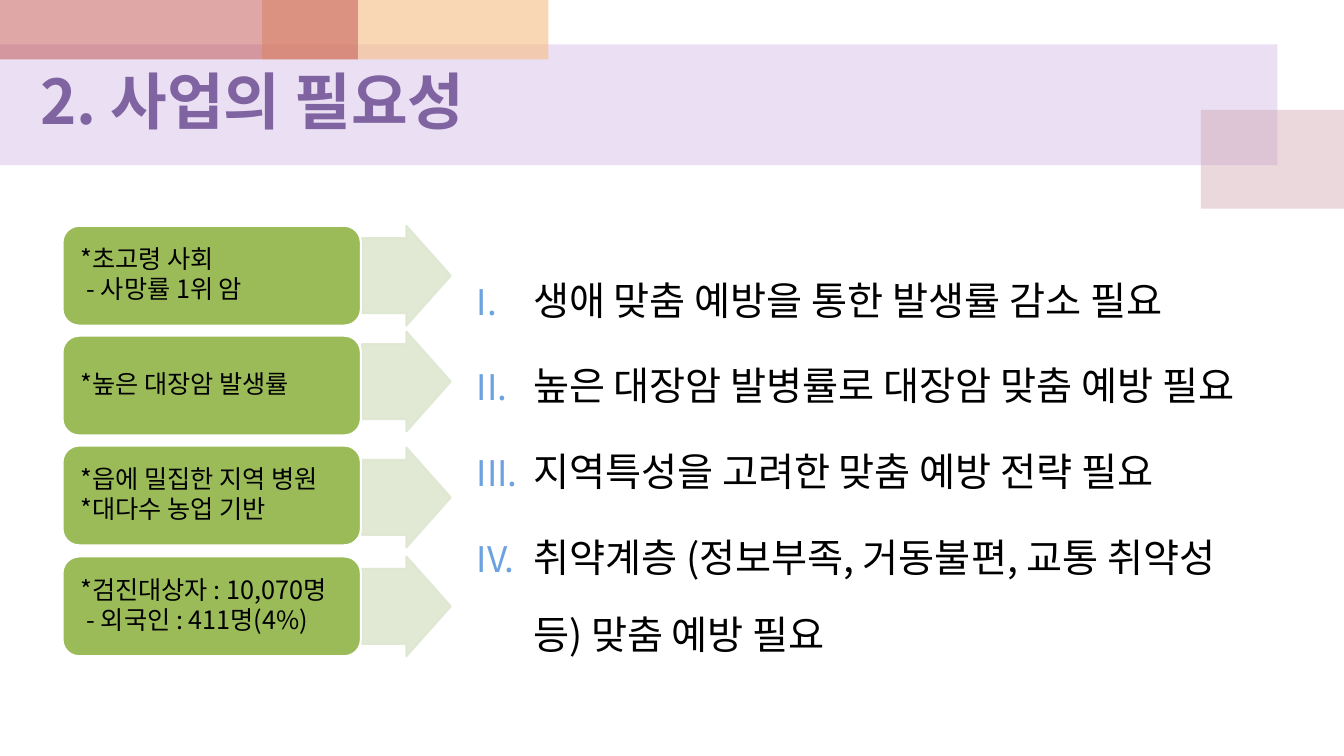
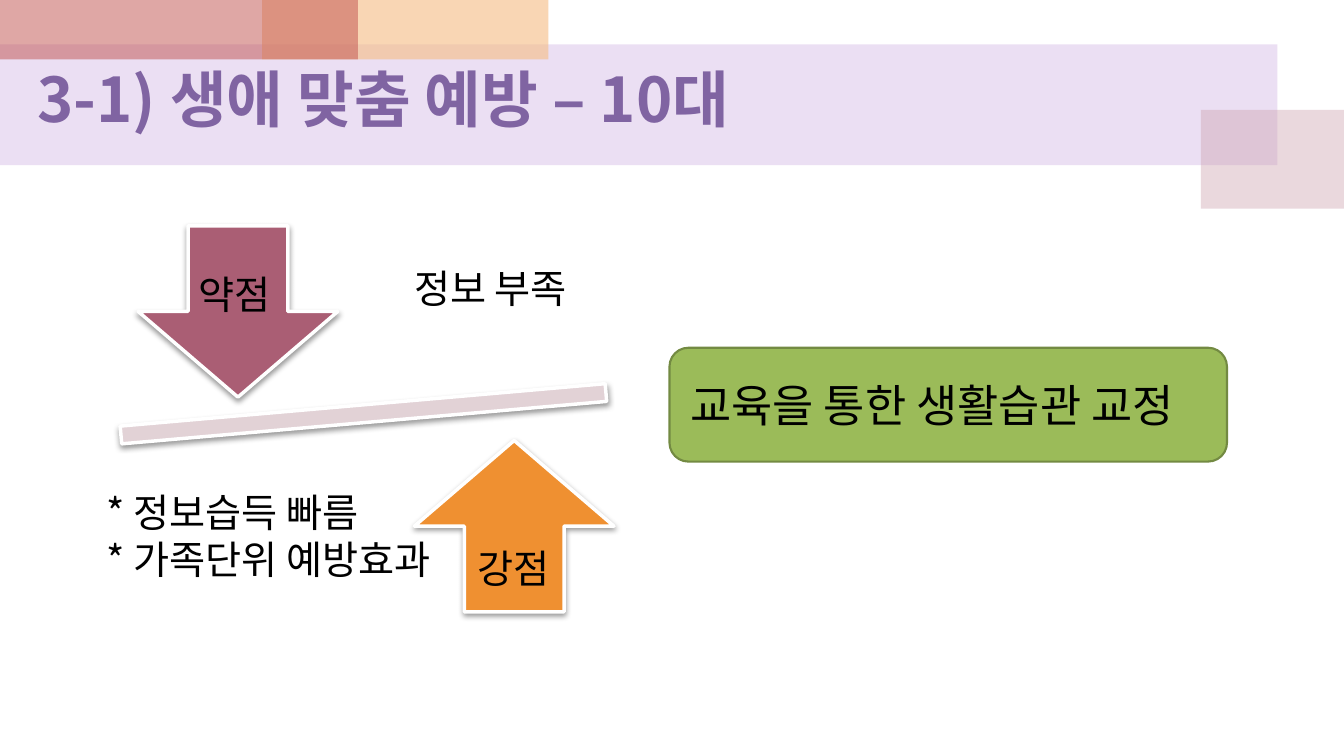
from lxml import etree
from pptx import Presentation
from pptx.dml.color import RGBColor
from pptx.enum.shapes import MSO_SHAPE
from pptx.enum.text import MSO_ANCHOR, PP_ALIGN
from pptx.oxml.ns import qn
from pptx.util import Emu, Pt

RECT = MSO_SHAPE.RECTANGLE
ROUND = MSO_SHAPE.ROUNDED_RECTANGLE
RIGHT = MSO_SHAPE.RIGHT_ARROW
DOWN = MSO_SHAPE.DOWN_ARROW
UP = MSO_SHAPE.UP_ARROW
MINUS = MSO_SHAPE.MATH_MINUS
TOP, MIDDLE = MSO_ANCHOR.TOP, MSO_ANCHOR.MIDDLE
LEFT, CENTER = PP_ALIGN.LEFT, PP_ALIGN.CENTER

FONT = "Noto Sans CJK KR"
BLACK, WHITE = "000000", "FFFFFF"
GREEN, OLIVE, PALE = "9BBB59", "738A42", "DEE7D1"
PURPLE, BLUE = "8064A2", "6BA2DF"
ROSE, ORANGE, BLUSH = "AA5E74", "EF9031", "E2D2D6"

# left, top, width, height, colour, opacity in percent
BANDS = [
    (0, 44, 1267, 120, "BF98D8", 30),
    (1191, 109, 142, 98, "CC9EAC", 40),
    (260, 0, 284, 59, "F5BC83", 60),
    (0, 0, 355, 59, "C0504D", 50),
]


def px(n):
    """Hundredths of an inch to EMU."""
    return Emu(n * 9144)


def rgb(code):
    return RGBColor.from_string(code)


def sub(node, tag, **attrs):
    """Add a child element and return it."""
    return etree.SubElement(node, qn(tag), {k: str(v) for k, v in attrs.items()})


class Deck:
    def __init__(self):
        self.prs = Presentation()
        self.prs.slide_width, self.prs.slide_height = px(1333), px(750)
        self.slide = None

    def page(self, title, left, top):
        """Start a slide with the shared bands and its title."""
        self.slide = self.prs.slides.add_slide(self.prs.slide_layouts[6])
        for *area, color, alpha in BANDS:
            self.shape(RECT, area, color, alpha=alpha)
        self.text([title], (left, top, 860, 78), 44, PURPLE, bold=True, anchor=MIDDLE)

    def shape(self, kind, area, color, line=None, width=1.5, alpha=100, shade=False):
        shape = self.slide.shapes.add_shape(kind, *map(px, area))
        shape.shadow.inherit = False
        shape.fill.solid()
        shape.fill.fore_color.rgb = rgb(color)
        if line:
            shape.line.color.rgb = rgb(line)
            shape.line.width = Pt(width)
        else:
            shape.line.fill.background()
        props = shape.element.spPr
        if alpha < 100:
            for node in props.iter(qn("a:srgbClr")):
                sub(node, "a:alpha", val=alpha * 1000)
        if shade:
            cast = sub(props.find(qn("a:effectLst")), "a:outerShdw", blurRad=Pt(4),
                       dist=Pt(2), dir=5400000, rotWithShape=0)
            sub(sub(cast, "a:srgbClr", val=BLACK), "a:alpha", val=40000)
        return shape

    def text(self, lines, area, size, color=BLACK, **style):
        box = self.slide.shapes.add_textbox(*map(px, area))
        self.label(box, lines, size, color, **style)
        return box

    def label(self, shape, lines, size, color=BLACK, bold=False, anchor=TOP,
              align=LEFT, inset=(10, 5, 10, 5), space=None, after=0):
        """Set the text of a shape and style it."""
        frame = shape.text_frame
        frame.word_wrap = True
        frame.vertical_anchor = anchor
        (frame.margin_left, frame.margin_top,
         frame.margin_right, frame.margin_bottom) = map(px, inset)
        frame.text = "\n".join(lines)
        for para in frame.paragraphs:
            para.alignment = align
            para.space_after = Pt(after)
            if space:
                para.line_spacing = space
            for run in para.runs:
                font = run.font
                font.size, font.bold = Pt(size), bold
                font.color.rgb = rgb(color)
                font.name = FONT
                sub(run._r.get_or_add_rPr(), "a:ea", typeface=FONT)

    def card(self, lines, area):
        """Green box; lines that start with a dash are indented deeper."""
        box = self.shape(ROUND, area, GREEN, WHITE)
        self.label(box, lines, 18, anchor=MIDDLE, inset=(7, 4, 7, 4), space=0.9, after=2)
        for para in box.text_frame.paragraphs:
            deep = para.text.startswith("-")
            para._p.get_or_add_pPr().set("marL", str(px(12 if deep else 6)))

    def roman(self, lines, area):
        """List numbered with Roman numerals."""
        box = self.text(lines, area, 28, space=1.64)
        for i, para in enumerate(box.text_frame.paragraphs):
            para.space_before = Pt(6 if i else 0)
            props = para._p.get_or_add_pPr()
            props.set("marL", str(px(56)))
            props.set("indent", str(px(-56)))
            sub(sub(props, "a:buClr"), "a:srgbClr", val=BLUE)
            sub(props, "a:buSzPct", val=90000)
            sub(props, "a:buFont", typeface=FONT)
            sub(props, "a:buAutoNum", type="romanUcPeriod")

    def note(self, lines, area, align=LEFT):
        self.text(lines, area, 28, anchor=MIDDLE, align=align,
                  inset=(22, 22, 22, 22), space=0.9, after=3.5)


def needs(deck):
    deck.page("2. 사업의 필요성", 30, 60)
    cards = [
        (224, ["*초고령 사회", "- 사망률 1위 암"]),
        (329, ["*높은 대장암 발생률"]),
        (444, ["*읍에 밀집한 지역 병원", "*대다수 농업 기반"]),
        (552, ["*검진대상자 : 10,070명", "- 외국인 : 411명(4%)"]),
    ]
    for i, (top, lines) in enumerate(cards):
        arrow = deck.shape(RIGHT, (359, top, 88, 99), PALE, PALE, alpha=90)
        arrow.adjustments[0] = 0.75
        deck.card(lines, (62, 224 + 328 * i // 3, 296, 99))
    deck.roman([
        "생애 맞춤 예방을 통한 발생률 감소 필요",
        "높은 대장암 발병률로 대장암 맞춤 예방 필요",
        "지역특성을 고려한 맞춤 예방 전략 필요",
        "취약계층 (정보부족, 거동불편, 교통 취약성 등) 맞춤 예방 필요",
    ], (463, 239, 806, 412))


def teens(deck):
    deck.page("3-1) 생애 맞춤 예방 – 10대", 27, 58)
    goal = deck.shape(ROUND, (664, 345, 553, 113), GREEN, OLIVE)
    deck.label(goal, ["교육을 통한 생활습관 교정"], 32, anchor=MIDDLE, inset=(15, 5, 7, 5))
    beam = deck.shape(MINUS, (32, 373, 657, 75), BLUSH, WHITE, 2.5, shade=True)
    beam.rotation = 355
    deck.shape(DOWN, (137, 224, 198, 170), ROSE, WHITE, 2.5, shade=True)
    deck.note(["정보 부족"], (381, 199, 211, 178), CENTER)
    deck.shape(UP, (411, 437, 198, 170), ORANGE, WHITE, 2.5, shade=True)
    deck.note(["* 정보습득 빠름", "* 가족단위 예방효과"], (84, 445, 393, 178))
    deck.text(["약점"], (187, 263, 107, 57), 28)
    deck.text(["강점"], (464, 535, 132, 57), 28)


def main():
    deck = Deck()
    needs(deck)
    teens(deck)
    deck.prs.save("out.pptx")


if __name__ == "__main__":
    main()
